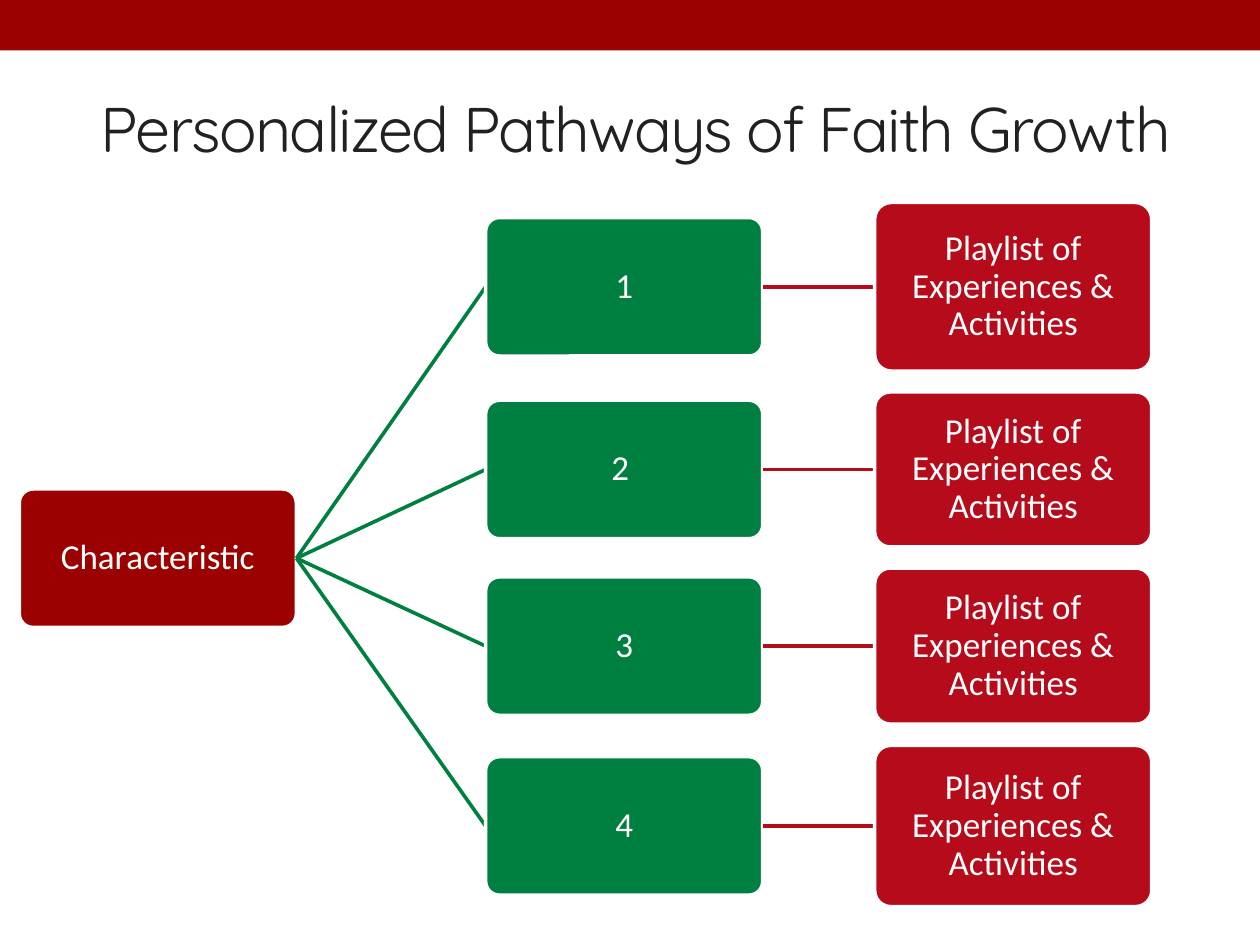
from lxml import etree
from pptx import Presentation
from pptx.dml.color import RGBColor
from pptx.enum.shapes import MSO_CONNECTOR, MSO_SHAPE
from pptx.enum.text import MSO_ANCHOR, MSO_AUTO_SIZE, PP_ALIGN
from pptx.oxml.ns import qn
from pptx.util import Pt

RECT, ROUND = MSO_SHAPE.RECTANGLE, MSO_SHAPE.ROUNDED_RECTANGLE
STRAIGHT = MSO_CONNECTOR.STRAIGHT
MIDDLE, CENTER, NO_FIT = MSO_ANCHOR.MIDDLE, PP_ALIGN.CENTER, MSO_AUTO_SIZE.NONE
LEFT, RIGHT = 1, 3

DARK, GREEN, RED, WHITE, INK = "9B0101", "008040", "B50B1B", "FFFFFF", "212121"
WIDE, HIGH, EDGE = 158.4, 79.2, 2.08
ROOT_X, STEP_X, LIST_X = 11, 277.5, 499.8
ROOT_Y = 319
STEPS = [("1", 163.9, 96.5), ("2 ", 268.3, 88.6), ("3", 369.2, 89.2), ("4", 472, 92.2)]


def color(code):
    """Turn a hex string into a colour."""
    return RGBColor.from_string(code)


def style(par, font, size, code):
    """Centre a paragraph and set its font."""
    par.alignment = CENTER
    par.font.name, par.font.size = font, Pt(size)
    par.font.color.rgb = color(code)


def add_title(slide, text):
    """Fill and place the title placeholder."""
    title = slide.shapes.title
    title.left, title.top, title.width, title.height = Pt(24.5), Pt(29.5), Pt(678), Pt(86.4)
    frame = title.text_frame
    frame.text, frame.vertical_anchor, frame.auto_size = text, MIDDLE, NO_FIT
    par = frame.paragraphs[0]
    style(par, "Quicksand", 36, INK)
    par.runs[0].font._element.set("spc", "-100")


def add_bar(slide):
    """Draw the band across the top."""
    bar = slide.shapes.add_shape(RECT, 0, 0, Pt(720), Pt(28.8))
    bar.shadow.inherit = False
    bar.fill.solid()
    bar.fill.fore_color.rgb = color(DARK)
    bar.line.fill.background()


def add_box(slide, text, left, mid, high, code):
    """Draw a rounded box centred on a height."""
    box = slide.shapes.add_shape(ROUND, Pt(left), Pt(mid - high / 2), Pt(WIDE), Pt(high))
    box.adjustments[0] = 0.1
    box.shadow.inherit = False
    box.fill.solid()
    box.fill.fore_color.rgb = color(code)
    box.line.color.rgb, box.line.width = color(WHITE), Pt(EDGE)
    frame = box.text_frame
    frame.word_wrap, frame.vertical_anchor = True, MIDDLE
    frame.margin_left = frame.margin_right = Pt(3.6)
    frame.margin_top = frame.margin_bottom = Pt(3.6)
    frame.text = text
    par = frame.paragraphs[0]
    par.line_spacing = 0.9
    style(par, "Calibri", 20, WHITE)
    return box


def add_child(slide, source, *spec):
    """Draw a box over the end of a line from its source."""
    line = slide.shapes.add_connector(STRAIGHT, 0, 0, 0, 0)
    line.line.color.rgb, line.line.width = color(spec[-1]), Pt(EDGE)
    etree.SubElement(line._element.spPr, qn("a:effectLst"))
    box = add_box(slide, *spec)
    line.begin_connect(source, RIGHT)
    line.end_connect(box, LEFT)
    return box


def main():
    """Build and save the slide."""
    deck = Presentation()
    deck.slide_width, deck.slide_height = Pt(720), Pt(540)
    slide = deck.slides.add_slide(deck.slide_layouts[5])
    add_bar(slide)
    add_title(slide, "Personalized Pathways of Faith Growth")
    root = add_box(slide, "Characteristic", ROOT_X, ROOT_Y, HIGH, DARK)
    for label, mid, high in STEPS:
        step = add_child(slide, root, label, STEP_X, mid, HIGH, GREEN)
        add_child(slide, step, "Playlist of Experiences & Activities", LIST_X, mid, high, RED)
    deck.save("out.pptx")


if __name__ == "__main__":
    main()
